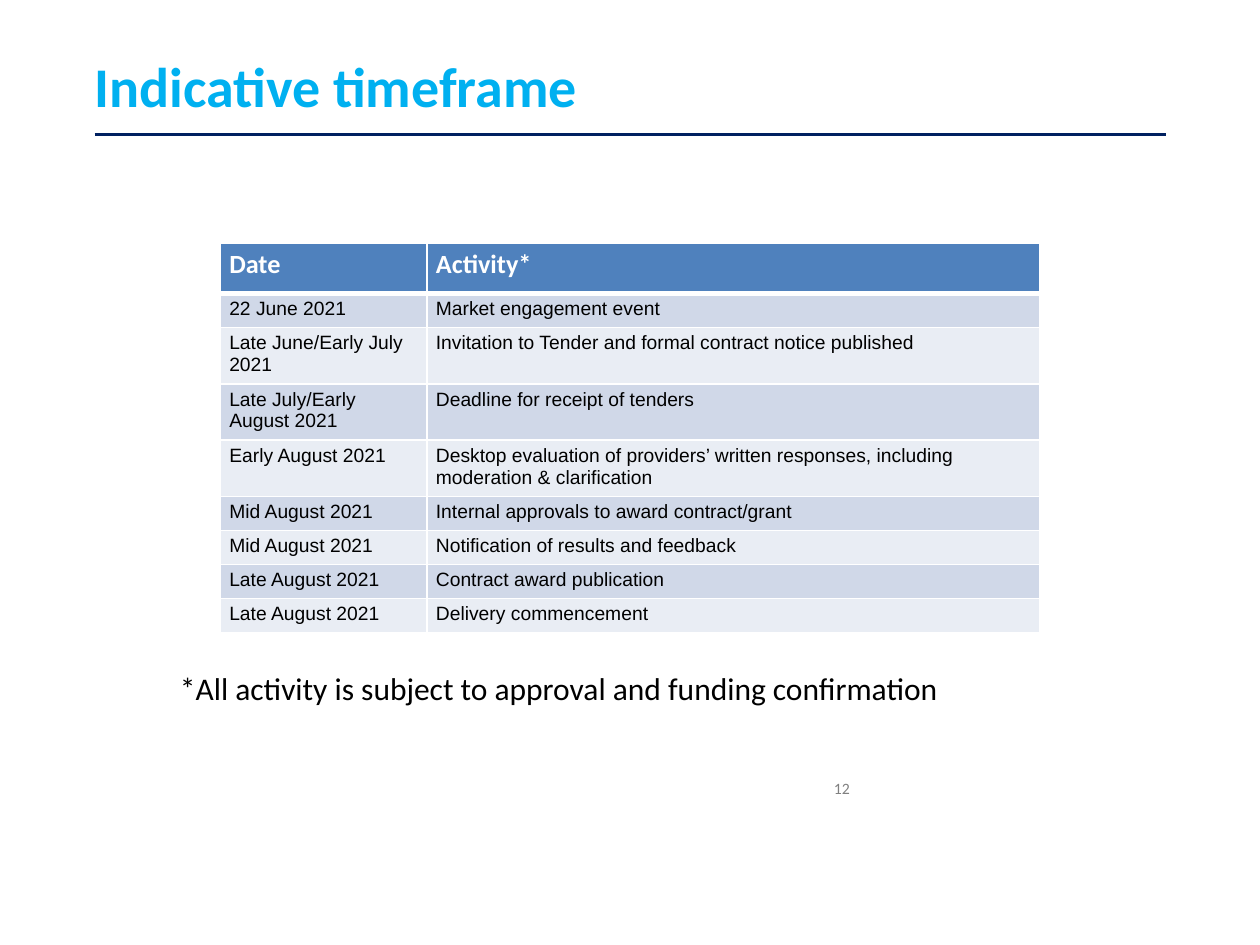
from lxml import etree
from pptx import Presentation
from pptx import util as u
from pptx.dml import color
from pptx.enum import shapes, text
from pptx.oxml import ns

COLOURS = {
    "title": "00B0F0", "rule": "002060", "header": "4F81BD", "odd": "D0D8E8",
    "even": "E9EDF4", "white": "FFFFFF", "black": "000000", "grey": "808080",
}
TITLE = {"name": "Calibri", "size": u.Pt(32), "bold": True}
HEADER = {"name": "Calibri", "size": u.Pt(15), "bold": True}
BODY = {"name": "Arial", "size": u.Pt(11), "bold": False}
NOTE = {"name": "Calibri", "size": u.Pt(18)}
NUMBER = {"name": "Calibri", "size": u.Pt(9)}
TITLE_FRAME = {
    "margin_left": 0, "margin_right": u.Inches(0.04),
    "vertical_anchor": text.MSO_ANCHOR.MIDDLE,
}
CELL_MARGINS = {
    "margin_left": u.Inches(0.07), "margin_right": u.Inches(0.07),
    "margin_top": u.Inches(0.04), "margin_bottom": u.Inches(0.04),
}
COLUMN_WIDTHS = (1.64, 4.86)
TIMEFRAME = [
    ("Date", "Activity*", 0.4),
    ("22 June 2021", "Market engagement event", 0.27),
    ("Late June/Early July 2021", "Invitation to Tender and formal contract notice published", 0.42),
    ("Late July/Early August 2021", "Deadline for receipt of tenders", 0.42),
    ("Early August 2021", "Desktop evaluation of providers’ written responses, "
     "including moderation & clarification", 0.42),
    ("Mid August 2021", "Internal approvals to award contract/grant", 0.27),
    ("Mid August 2021", "Notification of results and feedback", 0.27),
    ("Late August 2021", "Contract award publication", 0.27),
    ("Late August 2021", "Delivery commencement", 0.27),
]


def rgb(name):
    """Return the named colour."""
    return color.RGBColor.from_string(COLOURS[name])


def apply(target, values):
    """Set each attribute of the target from a dict."""
    for name, value in values.items():
        setattr(target, name, value)


def write(frame, words, font, colour):
    """Put one formatted paragraph in a text frame."""
    span = frame.paragraphs[0].add_run()
    span.text = words
    apply(span.font, font)
    span.font.color.rgb = rgb(colour)


def add_text(page, area, words, font, colour, layout=None):
    """Place a wrapped text box in the given area."""
    box = page.shapes.add_textbox(*map(u.Inches, area))
    box.text_frame.word_wrap = True
    apply(box.text_frame, layout or {})
    write(box.text_frame, words, font, colour)


def add_heading(page, left, top, width, height):
    """Place the title with the rule under it."""
    add_text(page, (left, top, width, height - 0.04), "Indicative timeframe",
             TITLE, "title", TITLE_FRAME)
    bottom = u.Inches(top + height)
    rule = page.shapes.add_connector(
        shapes.MSO_CONNECTOR.STRAIGHT, u.Inches(left), bottom, u.Inches(left + width), bottom)
    rule.line.color.rgb = rgb("rule")
    rule.line.width = u.Pt(1.5)
    etree.SubElement(rule._element.spPr, ns.qn("a:effectLst"))


def add_borders(cell, bottom):
    """Draw white borders round a cell."""
    properties = cell._tc.get_or_add_tcPr()
    for side, points in (("L", 1), ("R", 1), ("T", 1), ("B", bottom)):
        line = etree.SubElement(properties, ns.qn(f"a:ln{side}"), w=str(u.Pt(points)))
        fill = etree.SubElement(line, ns.qn("a:solidFill"))
        etree.SubElement(fill, ns.qn("a:srgbClr"), val=COLOURS["white"])


def add_timeframe(page, left, top, width, height):
    """Place the table of dates and activities."""
    table = page.shapes.add_table(
        len(TIMEFRAME), len(COLUMN_WIDTHS), *map(u.Inches, (left, top, width, height))).table
    for column, size in zip(table.columns, COLUMN_WIDTHS):
        column.width = u.Inches(size)
    for index, (row, (*words, size)) in enumerate(zip(table.rows, TIMEFRAME)):
        row.height = u.Inches(size)
        header = index == 0
        fill = "header" if header else "odd" if index % 2 else "even"
        for cell, label in zip(row.cells, words):
            apply(cell, CELL_MARGINS)
            add_borders(cell, 3 if header or index == 1 and False else 1)
            if index == 1:
                cell._tc.tcPr.find(ns.qn("a:lnT")).set("w", str(u.Pt(3)))
            cell.fill.solid()
            cell.fill.fore_color.rgb = rgb(fill)
            write(cell.text_frame, label, HEADER if header else BODY,
                  "white" if header else "black")


def main():
    """Build and save the slide."""
    deck = Presentation()
    deck.slide_width, deck.slide_height = u.Inches(10), u.Inches(7.5)
    page = deck.slides.add_slide(deck.slide_layouts[6])
    add_heading(page, 0.75, 0.32, 8.5, 0.75)
    add_timeframe(page, 1.75, 1.93, sum(COLUMN_WIDTHS), sum(row[-1] for row in TIMEFRAME))
    add_text(page, (6.52, 6.13, 0.42, 0.3), "12", NUMBER, "grey")
    add_text(page, (1.33, 5.26, 7.67, 0.4),
             "*All activity is subject to approval and funding confirmation", NOTE, "black")
    deck.save("out.pptx")


if __name__ == "__main__":
    main()
